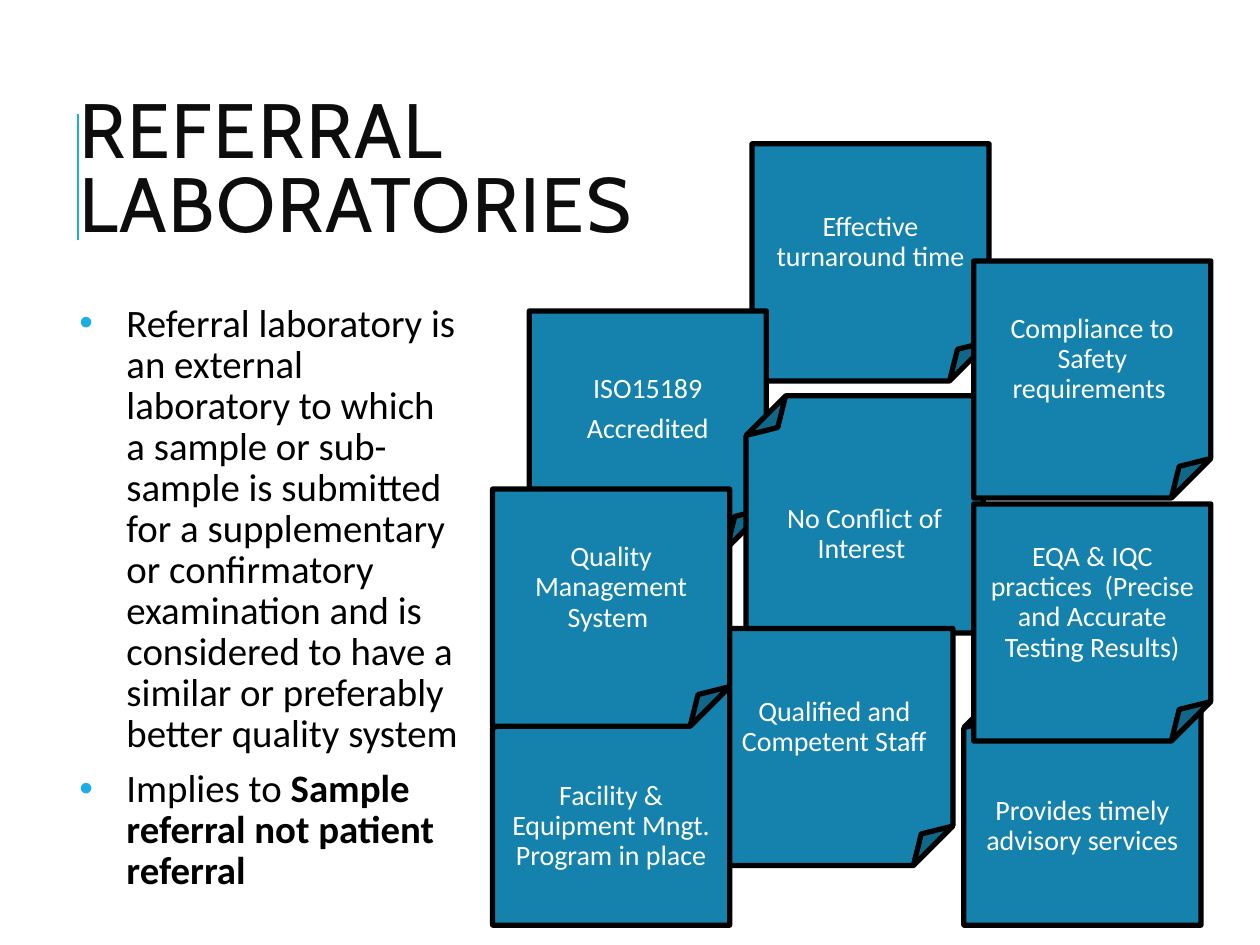
from lxml import etree
from pptx import Presentation
from pptx.dml.color import RGBColor
from pptx.enum.shapes import MSO_CONNECTOR, MSO_SHAPE
from pptx.enum.text import MSO_ANCHOR, PP_ALIGN
from pptx.oxml.ns import qn
from pptx.util import Cm, Pt

FOLDED = MSO_SHAPE.FOLDED_CORNER
STRAIGHT = MSO_CONNECTOR.STRAIGHT
MIDDLE, TOP = MSO_ANCHOR.MIDDLE, MSO_ANCHOR.TOP
CENTER, LEFT = PP_ALIGN.CENTER, PP_ALIGN.LEFT

COLORS = {"accent": "1CADE4", "note": "1482AC", "title": "0D0D0D",
          "ink": "000000", "light": "FFFFFF"}

# Formats: paragraph attributes and font attributes
TITLE = {"para": {"line_spacing": 0.8, "alignment": LEFT},
         "font": {"name": "Cabin", "size": Pt(44)}, "color": "title"}
BODY = {"para": {"line_spacing": 0.88, "space_before": Pt(6),
                 "space_after": Pt(2), "alignment": LEFT},
        "font": {"name": "Calibri", "size": Pt(22.2)}, "color": "ink"}
NOTE = {"para": {"line_spacing": 0.9, "space_after": Pt(5.6), "alignment": CENTER},
        "font": {"name": "Calibri", "size": Pt(16)}, "color": "light"}

NOTE_SIZE = 4.78   # side of a square note, cm
TEXT_HEIGHT = 3.98  # part of a note clear of its fold, cm

# Notes from back to front: left, top, rotation, paragraphs
NOTES = [
    (15.16, 2.9, 0, ["Effective turnaround time"]),
    (10.67, 6.27, 0, ["ISO15189", "Accredited"]),
    (15.04, 7.98, 180, ["No Conflict of Interest "]),
    (19.63, 5.26, 0, ["Compliance to Safety requirements "]),
    (14.43, 12.67, 0, ["Qualified and Competent Staff"]),
    (9.93, 13.87, 180, ["Facility & Equipment Mngt. Program in place"]),
    (9.93, 9.86, 0, ["Quality Management System "]),
    (19.43, 13.87, 180, ["Provides timely advisory services"]),
    (19.63, 10.16, 0, ["EQA & IQC practices  (Precise and Accurate Testing Results)"]),
]

# Each paragraph is a list of (text, bold)
BODY_TEXT = [
    [("Referral laboratory is an external laboratory to which a sample or "
      "sub-sample is submitted for a supplementary or confirmatory examination "
      "and is considered to have a similar or preferably better quality system",
      False)],
    [("Implies to ", False), ("Sample referral not patient referral", True)],
]


def color(name):
    return RGBColor.from_string(COLORS[name])


def set_values(target, values):
    for name, value in values.items():
        setattr(target, name, value)


def add_text(shapes, box, paragraphs, style, anchor, inset=None):
    """Add a wrapped text box and return its paragraphs."""
    frame = shapes.add_textbox(*map(Cm, box)).text_frame
    set_values(frame, {"word_wrap": True, "vertical_anchor": anchor})
    if inset is not None:
        for side in ("left", "top", "right", "bottom"):
            setattr(frame, f"margin_{side}", Cm(inset))
    for index, spans in enumerate(paragraphs):
        para = frame.add_paragraph() if index else frame.paragraphs[0]
        set_values(para, style["para"])
        for text, bold in spans:
            span = para.add_run()
            span.text = text
            set_values(span.font, {**style["font"], "bold": bold})
            span.font.color.rgb = color(style["color"])
    return frame.paragraphs


def add_bullet(para, indent):
    properties = para._p.get_or_add_pPr()
    properties.set("marL", str(Cm(indent)))
    properties.set("indent", str(-Cm(indent)))
    bullet_color = etree.SubElement(properties, qn("a:buClr"))
    etree.SubElement(bullet_color, qn("a:srgbClr"), val=COLORS["accent"])
    etree.SubElement(properties, qn("a:buFont"), typeface="Arial")
    etree.SubElement(properties, qn("a:buChar"), char="•")


def add_title(page, left, top, width, height):
    # Accent rule at the text edge
    x = Cm(left + 0.22)
    rule = page.shapes.add_connector(STRAIGHT, x, Cm(top + 1.02), x, Cm(top + 3.56))
    rule.line.color.rgb = color("accent")
    rule.line.width = Pt(1.5)
    etree.SubElement(rule._element.spPr, qn("a:effectLst"))

    # Heading with slightly spaced letters
    paras = add_text(page.shapes, (left, top, width, height),
                     [[("REFERRAL LABORATORIES", False)]], TITLE, MIDDLE)
    paras[0].runs[0].font._element.set("spc", "100")


def add_body(page, left, top, width, height):
    box = (left, top, width, height)
    for para in add_text(page.shapes, box, BODY_TEXT, BODY, TOP):
        add_bullet(para, 0.95)


def add_note(page, left, top, rotation, lines):
    group = page.shapes.add_group_shape()

    # Folded sheet
    sheet = group.shapes.add_shape(FOLDED, Cm(left), Cm(top),
                                   Cm(NOTE_SIZE), Cm(NOTE_SIZE))
    sheet.rotation = rotation
    sheet.shadow.inherit = False
    sheet.fill.solid()
    sheet.fill.fore_color.rgb = color("note")
    sheet.line.color.rgb = color("ink")
    sheet.line.width = Pt(3)

    # Upright label, below the fold when the sheet is turned
    offset = NOTE_SIZE - TEXT_HEIGHT if rotation else 0
    add_text(group.shapes, (left, top + offset, NOTE_SIZE, TEXT_HEIGHT),
             [[(line, False)] for line in lines], NOTE, MIDDLE, inset=0.18)


def main():
    deck = Presentation()
    deck.slide_width, deck.slide_height = Cm(25.4), Cm(19.05)
    page = deck.slides.add_slide(deck.slide_layouts[6])
    add_title(page, 1.35, 1.27, 12.98, 4.45)
    add_body(page, 1.35, 6.02, 8.2, 12.62)
    for note in NOTES:
        add_note(page, *note)
    deck.save("out.pptx")


if __name__ == "__main__":
    main()
